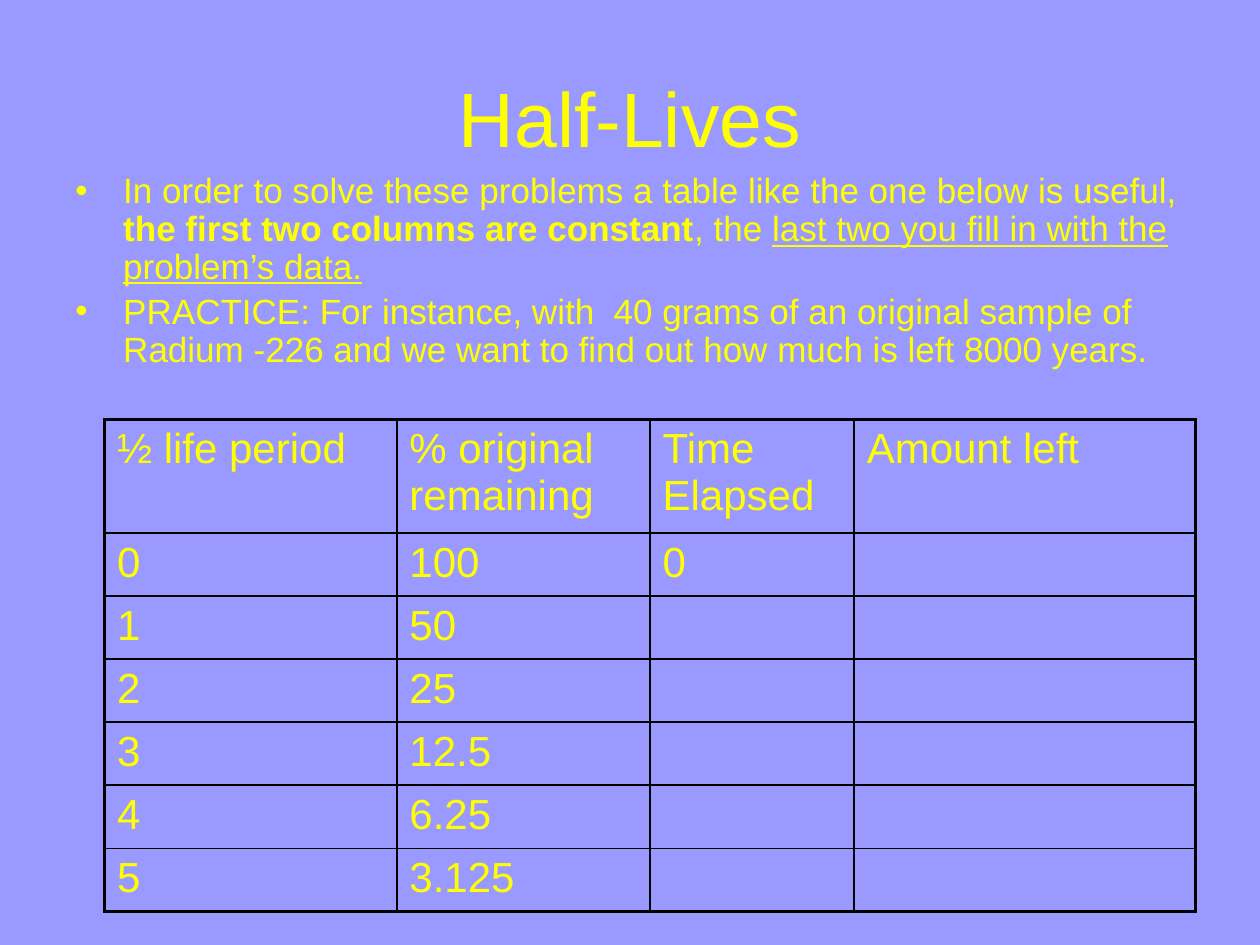
from dataclasses import dataclass

from lxml.etree import SubElement
from pptx import Presentation
from pptx.dml.color import RGBColor
from pptx.enum.text import MSO_ANCHOR, PP_ALIGN
from pptx.oxml import parse_xml
from pptx.oxml.ns import nsdecls, qn
from pptx.slide import Slide
from pptx.util import Inches, Pt


@dataclass(frozen=True)
class Theme:
    font: str = "Arial"
    background: str = "9999FF"
    text: str = "FFFF00"
    border: str = "000000"
    title_size: float = 44
    body_size: float = 20
    table_size: float = 24
    outer_line: float = 2.25
    inner_line: float = 1


@dataclass(frozen=True)
class Span:
    text: str
    bold: bool = False
    underline: bool = False


@dataclass(frozen=True)
class Bullet:
    spans: tuple[Span, ...]
    space_before: float = 0


THEME = Theme()
BULLETS = (
    Bullet((
        Span("In order to solve these problems a table like the one below is useful, "),
        Span("the first two columns are constant", bold=True),
        Span(", the "),
        Span("last two you fill in with the problem’s data.", underline=True),
    )),
    Bullet((
        Span("PRACTICE: For instance, with  40 grams of an original sample of "
             "Radium -226 and we want to find out how much is left 8000 years."),
    ), space_before=4),
)
COLUMN_WIDTHS = (2.32, 2.01, 1.62, 2.71)
HEADER_HEIGHT, ROW_HEIGHT = 0.9, 0.5
ROWS = (
    ("½ life period", "% original remaining", "Time Elapsed", "Amount left"),
    ("0", "100", "0", ""),
    ("1", "50", "", ""),
    ("2", "25", "", ""),
    ("3", "12.5", "", ""),
    ("4", "6.25", "", ""),
    ("5", "3.125", "", ""),
)


def add_span(p, span: Span, size: float) -> None:
    r = p.add_run()
    r.text = span.text
    r.font.name = THEME.font
    r.font.size = Pt(size)
    r.font.bold = span.bold
    r.font.underline = span.underline
    r.font.color.rgb = RGBColor.from_string(THEME.text)


def add_text_frame(s: Slide, left: float, top: float, width: float, height: float):
    sp = s.shapes.add_textbox(Inches(left), Inches(top), Inches(width), Inches(height))
    tf = sp.text_frame
    tf.word_wrap = True
    return tf


def add_title(s: Slide, text: str) -> None:
    tf = add_text_frame(s, 0.5, 0.3, 9, 1.25)
    tf.vertical_anchor = MSO_ANCHOR.MIDDLE
    p = tf.paragraphs[0]
    p.alignment = PP_ALIGN.CENTER
    add_span(p, Span(text), THEME.title_size)


def set_bullet(p) -> None:
    props = p._p.get_or_add_pPr()
    props.set("marL", str(Inches(0.38)))
    props.set("indent", str(-Inches(0.38)))
    color = SubElement(props, qn("a:buClr"))
    SubElement(color, qn("a:srgbClr"), val=THEME.text)
    SubElement(props, qn("a:buFont"), typeface=THEME.font)
    SubElement(props, qn("a:buChar"), char="•")


def add_bullets(s: Slide, bullets: tuple[Bullet, ...]) -> None:
    tf = add_text_frame(s, 0.5, 1.33, 9.17, 1.83)
    for i, bullet in enumerate(bullets):
        p = tf.add_paragraph() if i else tf.paragraphs[0]
        p.line_spacing = 0.9
        p.space_before = Pt(bullet.space_before)
        set_bullet(p)
        for span in bullet.spans:
            add_span(p, span, THEME.body_size)


def set_borders(cell, outer: dict[str, bool]) -> None:
    props = cell._tc.get_or_add_tcPr()
    for i, (side, is_outer) in enumerate(outer.items()):
        width = Pt(THEME.outer_line if is_outer else THEME.inner_line)
        props.insert(i, parse_xml(
            f'<a:ln{side} {nsdecls("a")} w="{width}"><a:solidFill>'
            f'<a:srgbClr val="{THEME.border}"/></a:solidFill></a:ln{side}>'))


def add_half_life_table(s: Slide) -> None:
    heights = (HEADER_HEIGHT,) + (ROW_HEIGHT,) * (len(ROWS) - 1)
    table = s.shapes.add_table(
        len(ROWS), len(COLUMN_WIDTHS), Inches(0.83), Inches(3.33),
        Inches(sum(COLUMN_WIDTHS)), Inches(sum(heights))).table
    table.first_row = table.horz_banding = False
    for column, width in zip(table.columns, COLUMN_WIDTHS):
        column.width = Inches(width)
    for row, height in zip(table.rows, heights):
        row.height = Inches(height)
    for i, values in enumerate(ROWS):
        for j, value in enumerate(values):
            cell = table.cell(i, j)
            cell.fill.background()
            set_borders(cell, {
                "L": j == 0, "R": j == len(values) - 1,
                "T": i == 0, "B": i == len(ROWS) - 1})
            p = cell.text_frame.paragraphs[0]
            if value:
                add_span(p, Span(value), THEME.table_size)


def main() -> None:
    prs = Presentation()
    prs.slide_width, prs.slide_height = Inches(10), Inches(7.5)
    s = prs.slides.add_slide(prs.slide_layouts[6])
    s.background.fill.solid()
    s.background.fill.fore_color.rgb = RGBColor.from_string(THEME.background)
    add_title(s, "Half-Lives")
    add_bullets(s, BULLETS)
    add_half_life_table(s)
    prs.save("out.pptx")


if __name__ == "__main__":
    main()
